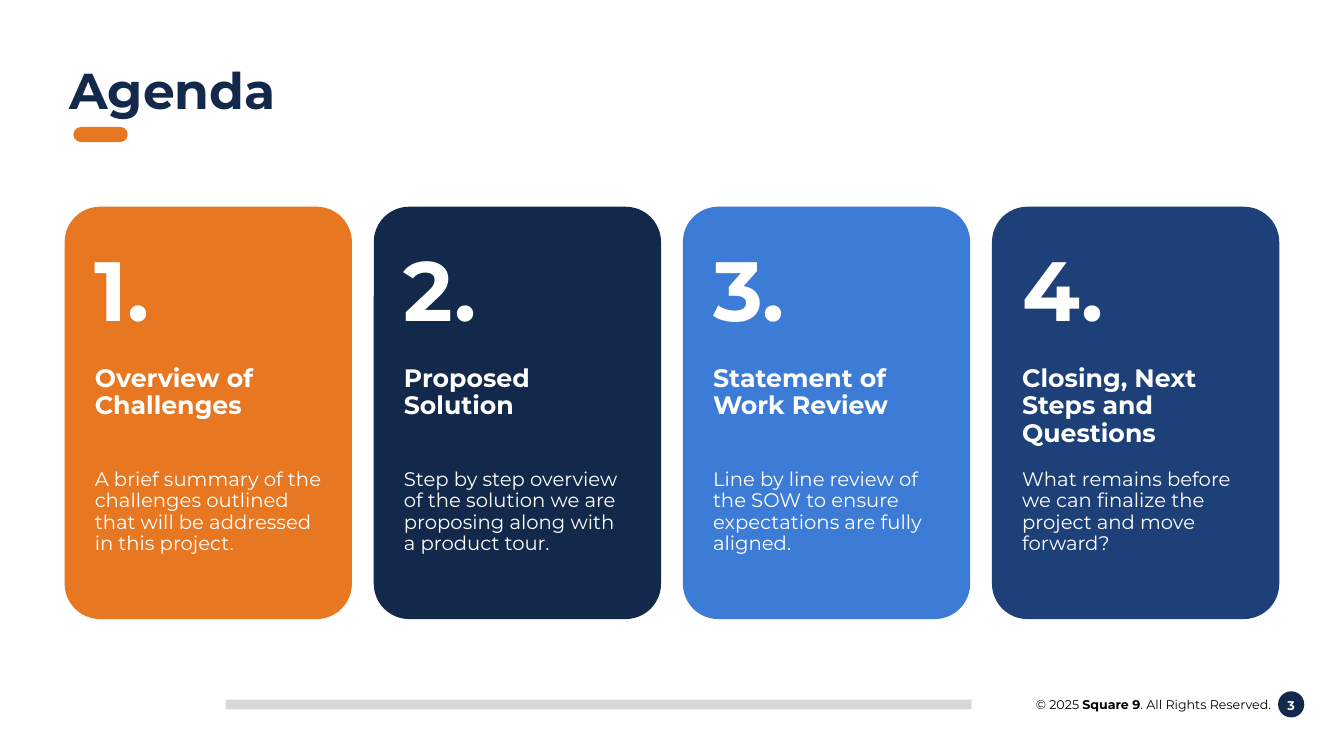
import pptx
import pptx.util
import pptx.dml.color
import pptx.enum.shapes
import pptx.enum.text

Cm, Pt = pptx.util.Cm, pptx.util.Pt
SHAPE = pptx.enum.shapes.MSO_SHAPE
ALIGN = pptx.enum.text.PP_ALIGN
FONT = "Montserrat"

COLORS = {"orange": "E87722", "navy": "13294B", "blue": "3C7CD6",
          "royal": "1E4078", "grey": "D8D8D8", "white": "FFFFFF", "black": "000000"}

# Content
TITLE = "Agenda"
AGENDA = [
    ("orange", "Overview of Challenges",
     "A brief summary of the challenges outlined that will be addressed in this project."),
    ("navy", "Proposed Solution",
     "Step by step overview of the solution we are proposing along with a product tour."),
    ("blue", "Statement of Work Review",
     "Line by line review of the SOW to ensure expectations are fully aligned."),
    ("royal", "Closing, Next Steps and Questions",
     "What remains before we can finalize the project and move forward?"),
]
COPYRIGHT = [("© 2025 ", False), ("Square 9", True), (". All Rights Reserved.", False)]
PAGE_NUMBER = "3"

# Layout in centimetres
CARD_LEFT, CARD_TOP, CARD_WIDTH, CARD_HEIGHT = 1.63, 5.21, 7.24, 10.39
CARD_PITCH = 7.79
TEXT_INDENT, TEXT_WIDTH = 0.51, 6.22


def rgb(color):
    return pptx.dml.color.RGBColor.from_string(COLORS[color])


def add_panel(slide, kind, box, color, rounding=None):
    panel = slide.shapes.add_shape(kind, *map(Cm, box))
    panel.shadow.inherit = False
    panel.fill.solid()
    panel.fill.fore_color.rgb = rgb(color)
    panel.line.fill.background()
    if rounding is not None:
        panel.adjustments[0] = rounding


def write(holder, runs, size, color, align=ALIGN.LEFT, spacing=None):
    frame = holder.text_frame
    frame.word_wrap = True
    frame.auto_size = pptx.enum.text.MSO_AUTO_SIZE.NONE
    frame.vertical_anchor = pptx.enum.text.MSO_ANCHOR.TOP
    frame.margin_left = frame.margin_right = Cm(0.25)
    frame.margin_top = frame.margin_bottom = Cm(0.13)
    line = frame.paragraphs[0]
    line.alignment = align
    line.line_spacing = spacing
    for words, bold in runs:
        run = line.add_run()
        run.text = words
        run.font.name = FONT
        run.font.size = Pt(size)
        run.font.bold = bold
        run.font.color.rgb = rgb(color)


def add_text(slide, box, *args, **kwargs):
    write(slide.shapes.add_textbox(*map(Cm, box)), *args, **kwargs)


def main():
    deck = pptx.Presentation()
    deck.slide_width, deck.slide_height = Cm(33.87), Cm(19.05)
    slide = deck.slides.add_slide(deck.slide_layouts[5])

    # Footer
    add_panel(slide, SHAPE.OVAL, (32.21, 17.42, 0.66, 0.66), "navy")
    add_text(slide, (31.98, 17.45, 1.12, 0.64), [(PAGE_NUMBER, True)], 9, "white", ALIGN.CENTER)
    add_panel(slide, SHAPE.RECTANGLE, (5.69, 17.63, 18.8, 0.25), "grey")
    add_text(slide, (24.41, 17.42, 7.87, 0.64), COPYRIGHT, 9, "black", ALIGN.RIGHT)

    # Title with its accent bar
    heading = slide.shapes.title
    heading.left, heading.top, heading.width, heading.height = map(Cm, (1.5, 1.52, 30.86, 1.63))
    write(heading, [(TITLE, True)], 36, "navy", spacing=0.9)
    add_panel(slide, SHAPE.ROUNDED_RECTANGLE, (1.85, 3.2, 1.37, 0.38), "orange", 0.5)

    # Agenda cards
    for index, (color, topic, summary) in enumerate(AGENDA):
        left = CARD_LEFT + index * CARD_PITCH
        add_panel(slide, SHAPE.ROUNDED_RECTANGLE,
                  (left, CARD_TOP, CARD_WIDTH, CARD_HEIGHT), color, 0.123)
        rows = [(6.15, 2.24, f"{index + 1}.", 60, True),
                (9.09, 2.24, topic, 18, True),
                (11.71, 3.0, summary, 14, False)]
        for top, height, words, size, bold in rows:
            add_text(slide, (left + TEXT_INDENT, top, TEXT_WIDTH, height),
                     [(words, bold)], size, "white", spacing=0.9)

    deck.save("out.pptx")


if __name__ == "__main__":
    main()
